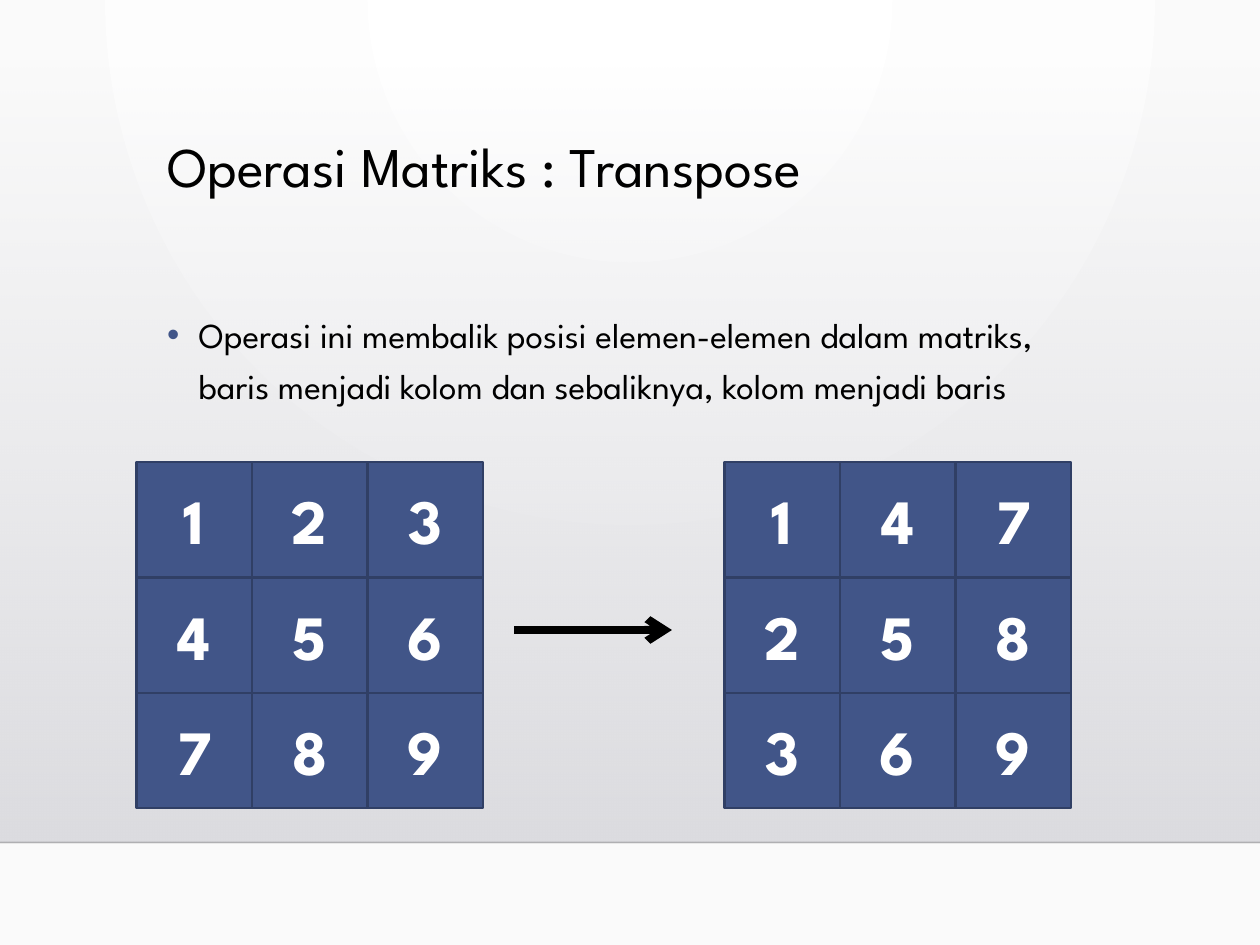
from dataclasses import dataclass

from lxml import etree
from pptx import Presentation
from pptx.dml.color import RGBColor
from pptx.enum.shapes import MSO_CONNECTOR, MSO_SHAPE
from pptx.enum.text import MSO_ANCHOR, PP_ALIGN
from pptx.oxml.ns import qn
from pptx.util import Emu, Pt

PX = 9525
WIDTH, HEIGHT = 960, 720
STRAIGHT = MSO_CONNECTOR.STRAIGHT
RECTANGLE = MSO_SHAPE.RECTANGLE
MIDDLE = MSO_ANCHOR.MIDDLE
CENTER = PP_ALIGN.CENTER


@dataclass(frozen=True)
class Theme:
    font: str = "League Spartan"
    text: str = "000000"
    accent: str = "415588"
    cell_border: str = "303F65"
    cell_text: str = "FFFFFF"
    glow: tuple = ("FFFFFF", "FAFAFA")
    wall: tuple = ("DCDCE0", "DEDEE2")
    floor_line: str = "000001"
    title_size: int = 32
    body_size: int = 20
    cell_size: int = 36


def px(*lengths):
    return [Emu(length * PX) for length in lengths]


def add_element(parent, tag, **attributes):
    return etree.SubElement(parent, qn(tag), attributes)


def set_alpha(color_element, percent):
    add_element(color_element, "a:alpha", val=str(percent * 1000))


class SlideBuilder:
    """Draws themed elements on one slide, with lengths in px."""

    def __init__(self, slide, theme):
        self.slide = slide
        self.theme = theme

    def style(self, paragraph, size, color, bold=False):
        font = paragraph.font
        font.name = self.theme.font
        font.size = Pt(size)
        font.bold = bold
        font.color.rgb = RGBColor.from_string(color)

    def gradient(self, fill, colors):
        fill.gradient()
        for stop, color, position in zip(fill.gradient_stops, colors, (0, 1)):
            stop.color.rgb = RGBColor.from_string(color)
            stop.position = position

    def background(self):
        self.gradient(self.slide.background.fill, self.theme.glow)
        gradient = next(self.slide.element.iter(qn("a:gradFill")))
        gradient.remove(gradient.find(qn("a:lin")))
        circle = add_element(gradient, "a:path", path="circle")
        add_element(circle, "a:fillToRect", l="43000", t="0", r="43000", b="100000")

    def wall(self, left, top, width, height):
        shape = self.slide.shapes.add_shape(RECTANGLE, *px(left, top, width, height))
        shape.shadow.inherit = False
        shape.line.fill.background()
        self.gradient(shape.fill, self.theme.wall)
        shape.fill.gradient_angle = 270
        colors = shape.element.spPr.iter(qn("a:srgbClr"))
        for color, percent in zip(colors, (0, 100)):
            set_alpha(color, percent)

    def line(self, start, end, color, width, opacity=100, arrow=False):
        connector = self.slide.shapes.add_connector(STRAIGHT, *px(*start, *end))
        connector.line.color.rgb = RGBColor.from_string(color)
        connector.line.width = Pt(width)
        properties = connector.element.spPr
        if opacity < 100:
            set_alpha(next(properties.iter(qn("a:srgbClr"))), opacity)
        if arrow:
            add_element(properties.find(qn("a:ln")), "a:tailEnd", type="arrow")
        add_element(properties, "a:effectLst")

    def text(self, box, content, size, spacing, bullet=False):
        frame = self.slide.shapes.add_textbox(*px(*box)).text_frame
        frame.word_wrap = True
        paragraph = frame.paragraphs[0]
        paragraph.text = content
        paragraph.line_spacing = spacing
        if bullet:
            properties = paragraph._p.get_or_add_pPr()
            properties.set("marL", str(24 * PX))
            properties.set("indent", str(-24 * PX))
            color = add_element(properties, "a:buClr")
            add_element(color, "a:srgbClr", val=self.theme.accent)
            add_element(properties, "a:buFont", typeface="Arial")
            add_element(properties, "a:buChar", char="•")
        self.style(paragraph, size, self.theme.text)

    def cell(self, left, top, side, value):
        shape = self.slide.shapes.add_shape(RECTANGLE, *px(left, top, side, side))
        shape.shadow.inherit = False
        shape.fill.solid()
        shape.fill.fore_color.rgb = RGBColor.from_string(self.theme.accent)
        shape.line.color.rgb = RGBColor.from_string(self.theme.cell_border)
        shape.line.width = Pt(1.25)
        frame = shape.text_frame
        frame.vertical_anchor = MIDDLE
        paragraph = frame.paragraphs[0]
        paragraph.text = str(value)
        paragraph.alignment = CENTER
        self.style(paragraph, self.theme.cell_size, self.theme.cell_text, bold=True)

    def matrix(self, left, top, side, rows):
        for row, values in enumerate(rows):
            for column, value in enumerate(values):
                self.cell(left + column * side, top + row * side, side, value)


def main():
    presentation = Presentation()
    presentation.slide_width, presentation.slide_height = px(WIDTH, HEIGHT)
    slide = presentation.slides.add_slide(presentation.slide_layouts[6])
    theme = Theme()
    builder = SlideBuilder(slide, theme)

    builder.background()
    builder.wall(0, 49, WIDTH, 593)
    builder.line((0, 642), (WIDTH, 642), theme.floor_line, 1, opacity=20)
    builder.text((118, 101, 690, 110), "Operasi Matriks : Transpose", theme.title_size, 0.9)
    builder.text(
        (118, 228, 690, 346),
        "Operasi ini membalik posisi elemen-elemen dalam matriks, "
        "baris menjadi kolom dan sebaliknya, kolom menjadi baris",
        theme.body_size,
        1.2,
        bullet=True,
    )

    matrix = [(1, 2, 3), (4, 5, 6), (7, 8, 9)]
    builder.matrix(104, 352, 88, matrix)
    builder.matrix(552, 352, 88, zip(*matrix))
    builder.line((392, 480), (512, 480), theme.text, 4.5, arrow=True)

    presentation.save("out.pptx")


if __name__ == "__main__":
    main()
